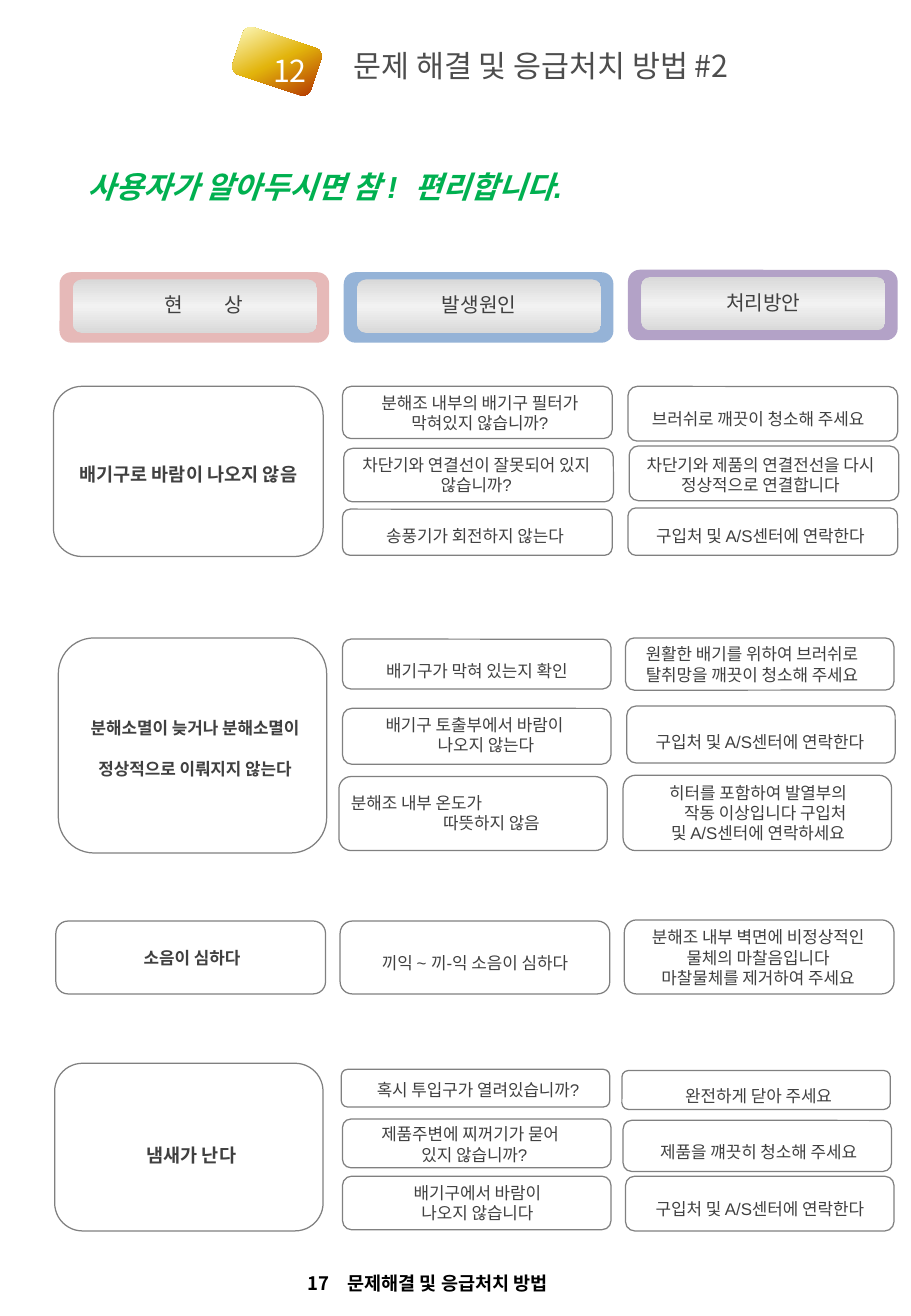
import pptx
import pptx.util
import pptx.dml.color
import pptx.enum.shapes
import pptx.enum.text
import pptx.oxml
import pptx.oxml.ns

EMU_PER_PX = 9144  # 100 px to the inch
KOREAN_FONT = "Noto Sans CJK KR"
DARK = "404040"
ALIGN = {"left": pptx.enum.text.PP_ALIGN.LEFT, "center": pptx.enum.text.PP_ALIGN.CENTER}
SILVER = [(0, "D9D9D9"), (50, "F2F2F2"), (100, "D9D9D9")]
GOLD = [(0, "B02A00"), (50, "E2B40C"), (100, "FFFFCC")]

# label, colour, left, top
HEADERS = [
    ("현 상", "E6B9B8", 49, 224),
    ("발생원인", "95B3D7", 283, 224),
    ("처리방안", "B3A2C7", 517, 222),
]

# card box, text offset (x, y), text height, text, format
SYMPTOMS = [
    ((44, 318, 222, 140), (0, 40), 47, "배기구로 바람이 나오지 않음", {"size": 11, "spacing": 2.0}),
    ((48, 525, 221, 177), (2, 44), 72, "분해소멸이 늦거나 분해소멸이 정상적으로 이뤄지지 않는다",
     {"spacing": 2.0}),
    ((46, 758, 222, 60), (1, 17), 27, "소음이 심하다", {"spacing": pptx.util.Pt(12)}),
    ((45, 875, 221, 138), (2, 43), 41, "냄새가 난다", {"size": 11, "spacing": 2.0}),
]

SINGLE = {"spacing": 1.5}
CAUSES = [
    ((282, 318, 222, 43), (2, 0), 44, "분해조 내부의 배기구 필터가 막혀있지 않습니까?", {}),
    ((283, 369, 222, 44), (-2, 0), 44, "차단기와 연결선이 잘못되어 있지 않습니까?", {}),
    ((282, 419, 222, 38), (-2, 0), 35, "송풍기가 회전하지 않는다", SINGLE),
    ((282, 526, 221, 41), (0, 4), 35, "배기구가 막혀 있는지 확인", SINGLE),
    ((282, 583, 221, 46), (-2, 0), 44, "배기구 토출부에서 바람이\n나오지 않는다", {"indents": (0, 19)}),
    ((279, 639, 221, 61), (0, 8), 44, "분해조 내부 온도가\n따뜻하지 않음",
     {"align": "left", "indents": (0, 76)}),
    ((280, 758, 222, 60), (0, 13), 35, "끼익 ~ 끼-익 소음이 심하다", SINGLE),
    ((281, 880, 221, 31), (2, -5), 35, "혹시 투입구가 열려있습니까?", SINGLE),
    ((282, 921, 221, 40), (1, -1), 44, "제품주변에 찌꺼기가 묻어\n있지 않습니까?", {"indents": (-13, 7)}),
    ((282, 968, 221, 44), (2, 0), 44, "배기구에서 바람이\n나오지 않습니다", {"indents": (-3, 0)}),
]

CALL_SERVICE = "구입처 및 A/S센터에 연락한다"
REMEDIES = [
    ((517, 318, 222, 45), (-4, 5), 35, "브러쉬로 깨끗이 청소해 주세요", SINGLE),
    ((518, 367, 222, 45), (-3, 2), 44, "차단기와 제품의 연결전선을 다시 정상적으로 연결합니다", {}),
    ((517, 418, 222, 39), (-2, 1), 33, CALL_SERVICE, SINGLE),
    ((515, 525, 221, 43), (-5, 0), 44, "원활한 배기를 위하여 브러쉬로\n탈취망을 깨끗이 청소해 주세요",
     {"indents": (-3, 0)}),
    ((516, 581, 221, 47), (-1, 8), 33, CALL_SERVICE, SINGLE),
    ((513, 638, 221, 62), (2, 1), 61,
     "히터를 포함하여 발열부의\n작동 이상입니다 구입처\n및 A/S센터에 연락하세요", {"indents": (-3, 12, 0)}),
    ((514, 757, 222, 61), (-1, 1), 61,
     "분해조 내부 벽면에 비정상적인 물체의 마찰음입니다\n마찰물체를 제거하여 주세요", {}),
    ((512, 881, 221, 32), (2, -1), 35, "완전하게 닫아 주세요", SINGLE),
    ((513, 922, 221, 42), (1, 4), 35, "제품을 꺠끗히 청소해 주세요", SINGLE),
    ((515, 968, 221, 45), (0, 5), 35, CALL_SERVICE, SINGLE),
]


def px(value):
    return pptx.util.Emu(value * EMU_PER_PX)


def rgb(hex_colour):
    return pptx.dml.color.RGBColor.from_string(hex_colour)


def write(frame, text, size=10, colour=DARK, font="Arial", bold=False, italic=False,
          align="left", spacing=None, indents=(), tab=None, tracking=None, wrap=True):
    """Fill a text frame; a positive indent is on the left, a negative one on the right."""
    frame.word_wrap = wrap
    frame.auto_size = pptx.enum.text.MSO_AUTO_SIZE.SHAPE_TO_FIT_TEXT
    frame.vertical_anchor = pptx.enum.text.MSO_ANCHOR.TOP
    for index, line in enumerate(text.split("\n")):
        paragraph = frame.paragraphs[0] if index == 0 else frame.add_paragraph()
        properties = paragraph._p.get_or_add_pPr()
        indent = indents[index] if indents else 0
        if indent:
            properties.set("marL" if indent > 0 else "marR", str(px(abs(indent))))
        if tab:
            tabs = pptx.oxml.parse_xml(
                f'<a:tabLst {pptx.oxml.ns.nsdecls("a")}><a:tab pos="{px(tab)}" algn="l"/></a:tabLst>')
            properties.append(tabs)
        paragraph.alignment = ALIGN[align]
        paragraph.line_spacing = spacing
        run = paragraph.add_run()
        run.text = line
        run.font.size = pptx.util.Pt(size)
        run.font.bold = bold
        run.font.italic = italic
        run.font.name = font
        run.font.color.rgb = rgb(colour)
        run_properties = run._r.get_or_add_rPr()
        run_properties.append(pptx.oxml.parse_xml(
            f'<a:ea {pptx.oxml.ns.nsdecls("a")} typeface="{KOREAN_FONT}"/>'))
        if tracking:
            run_properties.set("spc", str(tracking * 100))


def add_text(slide, box, text, **text_format):
    shape = slide.shapes.add_textbox(*map(px, box))
    write(shape.text_frame, text, **text_format)


def add_round_box(slide, box, fill, line=None):
    shape = slide.shapes.add_shape(
        pptx.enum.shapes.MSO_SHAPE.ROUNDED_RECTANGLE, *map(px, box))
    shape.shadow.inherit = False
    shape.fill.solid()
    shape.fill.fore_color.rgb = rgb(fill)
    if line:
        shape.line.color.rgb = rgb(line)
        shape.line.width = pptx.util.Pt(0.75)
    else:
        shape.line.fill.background()
    return shape


def set_gradient(shape, stops, angle):
    shape.fill.gradient()
    shape.fill.gradient_angle = 360 - angle  # python-pptx counts counter-clockwise
    stop_list = shape._element.spPr.find(".//" + pptx.oxml.ns.qn("a:gsLst"))
    for stop in list(stop_list):
        stop_list.remove(stop)
    for position, colour in stops:
        stop_list.append(pptx.oxml.parse_xml(
            f'<a:gs {pptx.oxml.ns.nsdecls("a")} pos="{position * 1000}">'
            f'<a:srgbClr val="{colour}"/></a:gs>'))


def add_header(slide, label, colour, left, top):
    add_round_box(slide, (left, top, 222, 58), colour)
    plate = add_round_box(slide, (left + 11, top + 6, 201, 44), "F2F2F2")
    set_gradient(plate, SILVER, 90)
    # Widely set letters leave a trailing gap, balanced by a left indent
    spread = {"tracking": 11, "indents": (15,)} if " " in label else {}
    add_text(slide, (left + 23, top + 12, 177, 30), label, size=12,
             font=KOREAN_FONT, align="center", **spread)


def add_card(slide, box, offset, text_height, text, **text_format):
    left, top, width, _ = box
    add_round_box(slide, box, "FFFFFF", line="808080")
    add_text(slide, (left + offset[0], top + offset[1], width, text_height), text,
             **{"align": "center", **text_format})


def add_title(slide):
    badge = add_round_box(slide, (194, 30, 68, 41), "E2B40C")
    set_gradient(badge, GOLD, 225)
    badge.rotation = 18.3
    add_text(slide, (215, 38, 52, 40), "12", size=18, colour="FFFFFF",
             font=KOREAN_FONT, wrap=False)
    title = slide.shapes.title
    title.left, title.top, title.width, title.height = map(px, (281, 34, 377, 40))
    write(title.text_frame, "문제 해결 및 응급처치 방법 #2", size=18, colour="4D4D4D",
          font=KOREAN_FONT, wrap=False)


def main():
    presentation = pptx.Presentation()
    presentation.slide_width, presentation.slide_height = px(750), px(1083)
    slide = presentation.slides.add_slide(presentation.slide_layouts[5])

    # Title and slogan
    add_title(slide)
    add_text(slide, (62, 147, 661, 27), "사용자가 알아두시면 참 !  편리합니다.", size=18,
             colour="00B050", bold=True, italic=True, spacing=pptx.util.Pt(12))

    # Column headers
    for header in HEADERS:
        add_header(slide, *header)

    # Symptoms, causes and remedies
    for box, offset, height, text, text_format in SYMPTOMS:
        add_card(slide, box, offset, height, text, bold=True, **text_format)
    for box, offset, height, text, text_format in CAUSES + REMEDIES:
        add_card(slide, box, offset, height, text, **text_format)

    # Page footer
    add_text(slide, (243, 1042, 353, 29), "17\t문제해결 및 응급처치 방법", size=11,
             colour="000000", font=KOREAN_FONT, bold=True, tab=33)

    presentation.save("out.pptx")


if __name__ == "__main__":
    main()
